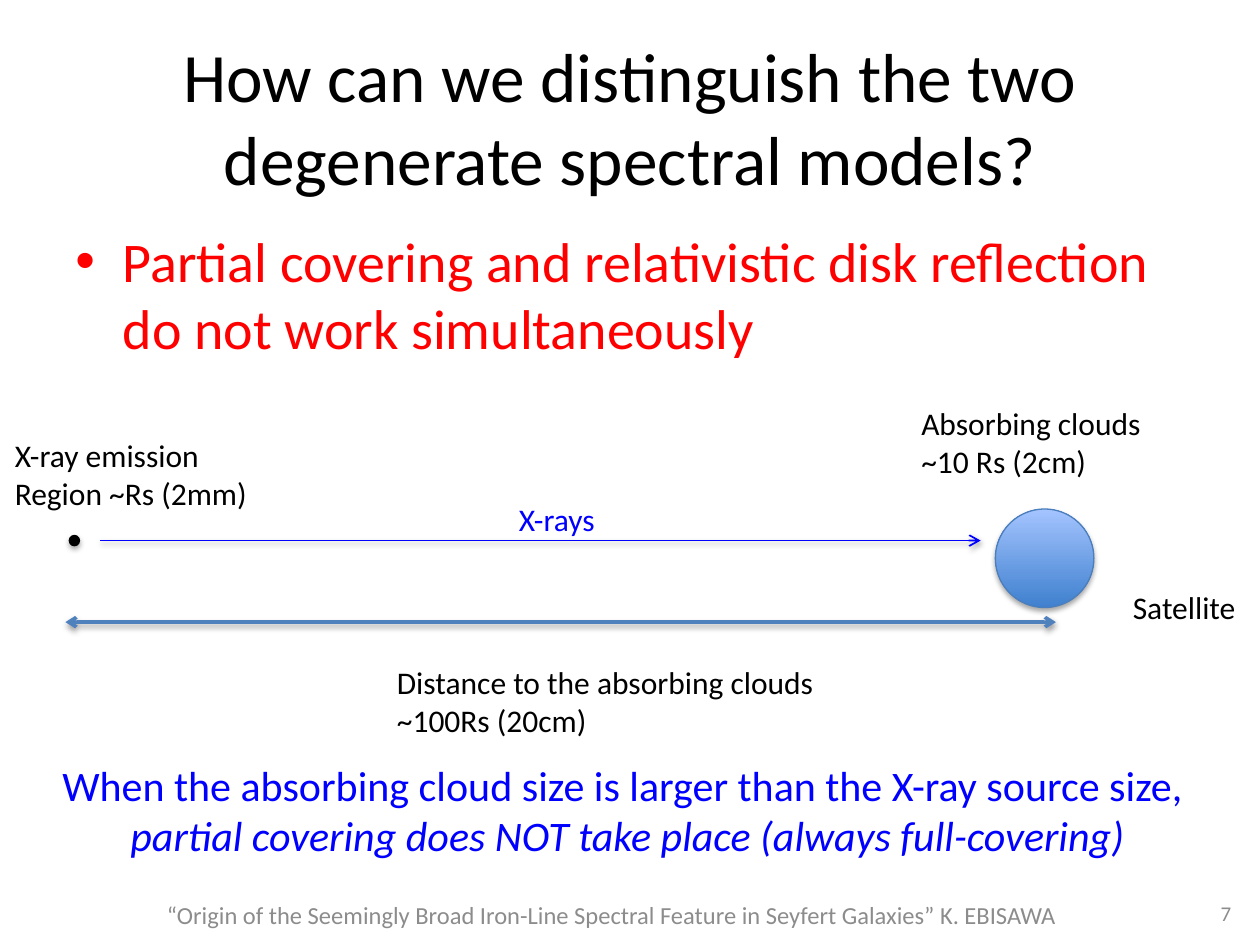
from lxml import etree
from pptx import Presentation
from pptx.dml.color import RGBColor
from pptx.enum.shapes import MSO_CONNECTOR, MSO_SHAPE
from pptx.enum.text import MSO_ANCHOR, MSO_AUTO_SIZE, PP_ALIGN
from pptx.oxml.ns import qn
from pptx.util import Pt

LINE, OVAL = MSO_CONNECTOR.STRAIGHT, MSO_SHAPE.OVAL
LEFT, CENTER, RIGHT = PP_ALIGN.LEFT, PP_ALIGN.CENTER, PP_ALIGN.RIGHT
TOP, MIDDLE = MSO_ANCHOR.TOP, MSO_ANCHOR.MIDDLE
FONT = "Calibri"
C = {"black": "000000", "red": "FF0000", "blue": "0000FF", "grey": "8C8C8C",
     "span": "4F81BD", "cloud_line": "4B7EBC",
     "cloud_dark": "3F80CE", "cloud_light": "A4C4FF"}


def rgb(name):
    return RGBColor.from_string(C[name])


def place(sp, box):
    sp.left, sp.top, sp.width, sp.height = (Pt(v) for v in box)


def write(tf, lines, size, color, align=LEFT, anchor=TOP, wrap=True, italic=()):
    """Write one paragraph per line; italic holds the indexes of italic lines."""
    tf.word_wrap = wrap
    tf.auto_size = MSO_AUTO_SIZE.NONE if wrap else MSO_AUTO_SIZE.SHAPE_TO_FIT_TEXT
    tf.vertical_anchor = anchor
    for i, line in enumerate(lines):
        p = tf.paragraphs[0] if i == 0 else tf.add_paragraph()
        p.alignment = align
        r = p.add_run()
        r.text = line
        r.font.name, r.font.size = FONT, Pt(size)
        r.font.color.rgb = rgb(color)
        if i in italic:
            r.font.italic = True


def add_text(shapes, box, lines, size, color, **style):
    sp = shapes.add_textbox(*(Pt(v) for v in box))
    write(sp.text_frame, lines, size, color, **style)
    return sp


def add_shadow(sp, alpha, dist):
    """Soft shadow straight below; call after fill and line are set."""
    effects = etree.SubElement(sp._element.spPr, qn("a:effectLst"))
    shadow = etree.SubElement(effects, qn("a:outerShdw"), blurRad=str(Pt(3.1)),
                              dist=str(Pt(dist)), dir="5400000", rotWithShape="0")
    color = etree.SubElement(shadow, qn("a:srgbClr"), val=C["black"])
    etree.SubElement(color, qn("a:alpha"), val=str(alpha * 1000))


def add_arrow(shapes, x1, x2, y, color, width, ends):
    cn = shapes.add_connector(LINE, Pt(x1), Pt(y), Pt(x2), Pt(y))
    cn.line.color.rgb, cn.line.width = rgb(color), Pt(width)
    for end in ends:
        etree.SubElement(cn.line._get_or_add_ln(), qn(f"a:{end}"), type="arrow")
    add_shadow(cn, 38, 1.6)


def add_circle(shapes, x, y, d, line):
    sp = shapes.add_shape(OVAL, Pt(x), Pt(y), Pt(d), Pt(d))
    sp.line.color.rgb, sp.line.width = rgb(line), Pt(0.75)
    return sp


def add_title(s, box):
    place(s.shapes.title, box)
    write(s.shapes.title.text_frame,
          ["How can we distinguish the two degenerate spectral models?"],
          39.6, "black", align=CENTER, anchor=MIDDLE)


def add_bullet(s, box):
    sp = add_text(s.shapes, box, ["Partial covering and relativistic disk "
                                  "reflection do not work simultaneously"], 32, "red")
    p = sp.text_frame.paragraphs[0]
    p.space_before = Pt(6.4)
    pPr = p._p.get_or_add_pPr()
    pPr.set("marL", str(Pt(27)))
    pPr.set("indent", str(-Pt(27)))
    etree.SubElement(pPr, qn("a:buFont"), typeface="Arial")
    etree.SubElement(pPr, qn("a:buChar"), char="•")


def add_diagram(s, box):
    x, y, w, h = box
    shapes = s.shapes

    # X-ray source
    source = add_circle(shapes, x + 38.2, y + 78.5, 5.8, "black")
    source.fill.solid()
    source.fill.fore_color.rgb = rgb("black")
    add_shadow(source, 35, 1.8)

    # Distance from source to cloud
    add_arrow(shapes, x + 36, x + 602, y + 128, "span", 2, ("headEnd", "tailEnd"))

    # Absorbing cloud
    cloud = add_circle(shapes, x + 567.4, y + 63.4, 56.3, "cloud_line")
    cloud.fill.gradient()
    cloud.fill.gradient_angle = 90
    for stop, name in zip(cloud.fill.gradient_stops, ("cloud_dark", "cloud_light")):
        stop.color.rgb = rgb(name)
    add_shadow(cloud, 35, 1.8)

    # Rays with their label
    rays = shapes.add_group_shape().shapes
    add_arrow(rays, x + 56, x + 559, y + 81.4, "blue", 1, ("tailEnd",))
    add_text(rays, (x + 288, y + 54.5, 60, 29), ["X-rays"], 18, "blue", wrap=False)

    # Labels
    for dx, dy, lw, lines in (
            (0, 18, 149, ["X-ray emission", "Region ~Rs (2mm)"]),
            (518, 0, 141, ["Absorbing clouds", "~10 Rs (2cm)"]),
            (218.3, h - 51, 256, ["Distance to the absorbing clouds", "~100Rs (20cm)"]),
            (w - 74, 105, 74, ["Satellite"])):
        add_text(shapes, (x + dx, y + dy, lw, 7.2 + 22 * len(lines)),
                 lines, 18, "black", wrap=False)


def add_conclusion(s, box):
    add_text(s.shapes, box,
             ["When the absorbing cloud size is larger than the X-ray source size, ",
              "partial covering does NOT take place (always full-covering)"],
             24, "blue", align=CENTER, wrap=False, italic=(1,))


def add_footer(s, box):
    x, y, w, h = box
    add_text(s.shapes, (x, y, 536.5, h),
             ["“Origin of the Seemingly Broad Iron-Line Spectral Feature "
              "in Seyfert Galaxies” K. EBISAWA"],
             14, "grey", align=CENTER, anchor=MIDDLE)
    add_text(s.shapes, (x + w - 168, y - 0.7, 168, h), ["7"],
             12, "grey", align=RIGHT, anchor=MIDDLE)


def main():
    prs = Presentation()
    prs.slide_width, prs.slide_height = Pt(720), Pt(540)
    s = prs.slides.add_slide(prs.slide_layouts[5])
    add_title(s, (36, 21.6, 648, 90))
    add_bullet(s, (36, 126, 648, 85))
    add_diagram(s, (1.4, 227.5, 712.8, 198.7))
    add_conclusion(s, (26, 430.5, 665, 65.5))
    add_footer(s, (81.4, 508.3, 629.2, 28.8))
    prs.save("out.pptx")


if __name__ == "__main__":
    main()
